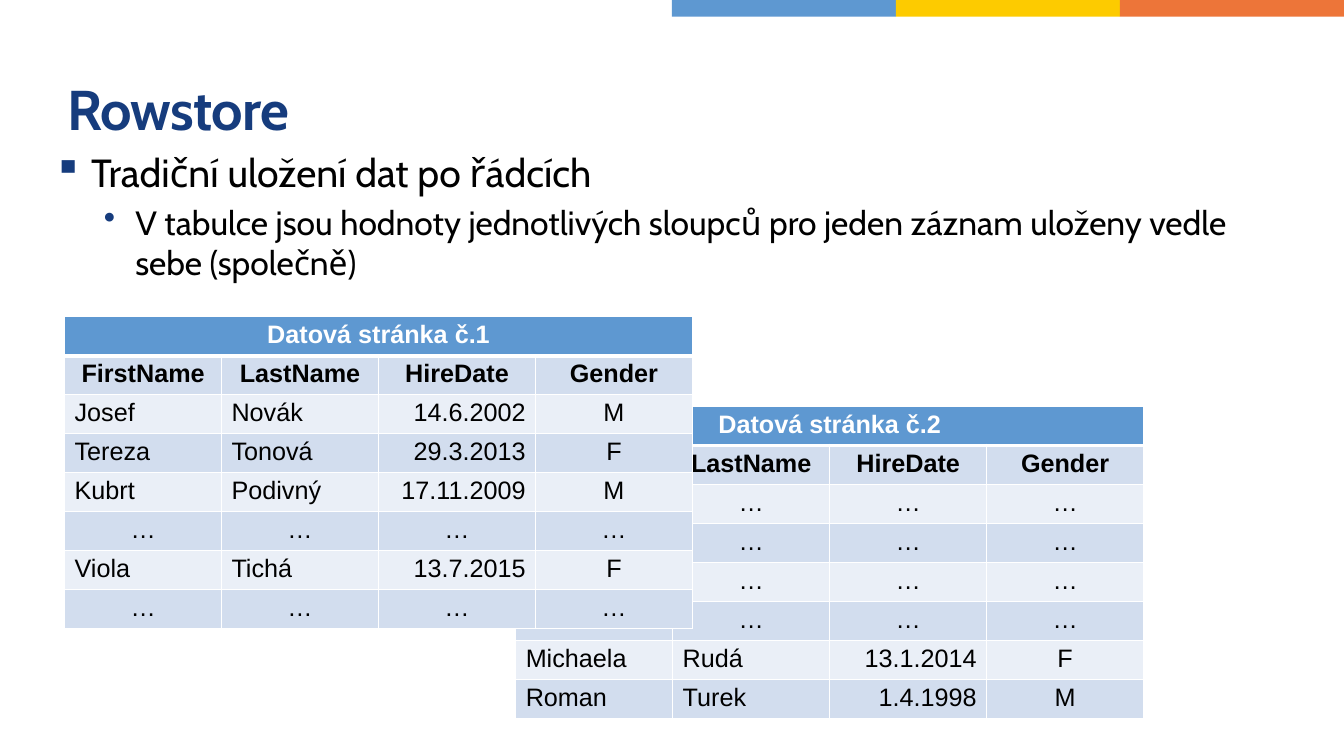
from lxml import etree
from pptx import Presentation
from pptx.dml.color import RGBColor
from pptx.enum.shapes import MSO_SHAPE
from pptx.enum.text import MSO_ANCHOR, PP_ALIGN
from pptx.oxml.ns import qn
from pptx.util import Cm, Pt

RECT = MSO_SHAPE.RECTANGLE
MIDDLE = MSO_ANCHOR.MIDDLE
LEFT, CENTER, RIGHT = PP_ALIGN.LEFT, PP_ALIGN.CENTER, PP_ALIGN.RIGHT

COLORS = {
    "blue": "5E98D1", "yellow": "FDCB00", "orange": "ED7539",
    "navy": "163C7D", "black": "000000", "white": "FFFFFF",
    "dark": "D2DDEE", "light": "EAEFF7",
}


def style(para, font, size, color, bold=False):
    para.font.name = font
    para.font.size = Pt(size)
    para.font.bold = bold
    para.font.color.rgb = RGBColor.from_string(COLORS[color])


def add_box(left, top, width, height):
    frame = slide.shapes.add_textbox(Cm(left), Cm(top), Cm(width), Cm(height)).text_frame
    frame.word_wrap = True
    frame.margin_left = frame.margin_right = frame.margin_top = frame.margin_bottom = 0
    return frame


prs = Presentation()
prs.slide_width, prs.slide_height = Cm(33.87), Cm(19.05)
slide = prs.slides.add_slide(prs.slide_layouts[6])

# Color strip
for i, color in enumerate(("blue", "yellow", "orange")):
    bar = slide.shapes.add_shape(RECT, Cm(16.93 + 5.645 * i), 0, Cm(5.645), Cm(0.42))
    bar.shadow.inherit = False
    bar.fill.solid()
    bar.fill.fore_color.rgb = RGBColor.from_string(COLORS[color])
    bar.line.fill.background()

# Title
frame = add_box(1.7, 1.14, 30.48, 3.18)
frame.vertical_anchor = MIDDLE
title = frame.paragraphs[0]
run = title.add_run()
run.text = "Rowstore"
run.font._element.set("spc", "-60")
style(title, "Cabin", 40, "navy", True)

# Bullets: text, level, size, indent, hanging, mark
points = [
    ("Tradiční uložení dat po řádcích", 0, 28, 0.95, 0.95, "▪"),
    ("V tabulce jsou hodnoty jednotlivých sloupců pro jeden záznam "
     "uloženy vedle sebe (společně)", 1, 24, 2.06, 0.79, "•"),
]
frame = add_box(1.35, 3.73, 31.29, 4.14)
for i, (text, level, size, indent, hang, mark) in enumerate(points):
    para = frame.add_paragraph() if i else frame.paragraphs[0]
    para.text = text
    para.level = level
    para.space_before = Pt(size * 0.2)
    style(para, "Cabin", size, "black")
    props = para._p.get_or_add_pPr()
    props.set("marL", str(Cm(indent)))
    props.set("indent", str(-Cm(hang)))
    tint = etree.Element(qn("a:buClr"))
    etree.SubElement(tint, qn("a:srgbClr"), val=COLORS["navy"])
    bullet = etree.Element(qn("a:buChar"), char=mark)
    last = props.find(qn("a:defRPr"))
    last.addprevious(tint)
    last.addprevious(bullet)

# Data pages, the first one in front
heads = ["FirstName", "LastName", "HireDate", "Gender"]
gap = ["…"] * 4
pages = [
    ("Datová stránka č.2", 13, 10.24, [
        gap, gap, gap, gap,
        ["Michaela", "Rudá", "13.1.2014", "F"],
        ["Roman", "Turek", "1.4.1998", "M"]]),
    ("Datová stránka č.1", 1.63, 7.98, [
        ["Josef", "Novák", "14.6.2002", "M"],
        ["Tereza", "Tonová", "29.3.2013", "F"],
        ["Kubrt", "Podivný", "17.11.2009", "M"],
        gap,
        ["Viola", "Tichá", "13.7.2015", "F"],
        gap]),
]
aligns = [LEFT, LEFT, RIGHT, CENTER]
for name, left, top, records in pages:
    rows = [[name, "", "", ""], heads] + records
    table = slide.shapes.add_table(len(rows), 4, Cm(left), Cm(top),
                                   Cm(15.82), Cm(0.97 * len(rows))).table
    for row in table.rows:
        row.height = Cm(0.97)
    for r, row in enumerate(rows):
        for c, text in enumerate(row):
            cell = table.cell(r, c)
            cell.margin_left = cell.margin_right = Cm(0.25)
            cell.margin_top = cell.margin_bottom = Cm(0.11)
            cell.fill.solid()
            fill = "blue" if r == 0 else "dark" if r % 2 else "light"
            cell.fill.fore_color.rgb = RGBColor.from_string(COLORS[fill])
            para = cell.text_frame.paragraphs[0]
            para.text = text
            para.alignment = CENTER if r < 2 or text == "…" else aligns[c]
            style(para, "Arial", 18, "black" if r else "white", r < 2)
            # White borders, thick under the page name
            for i, side in enumerate("LRTB"):
                thick = (r, side) in ((0, "B"), (1, "T"))
                line = etree.Element(qn("a:ln" + side), w=str(Pt(3 if thick else 1)))
                paint = etree.SubElement(line, qn("a:solidFill"))
                etree.SubElement(paint, qn("a:srgbClr"), val=COLORS["white"])
                cell._tc.get_or_add_tcPr().insert(i, line)
    table.cell(0, 0).merge(table.cell(0, 3))

prs.save("out.pptx")
